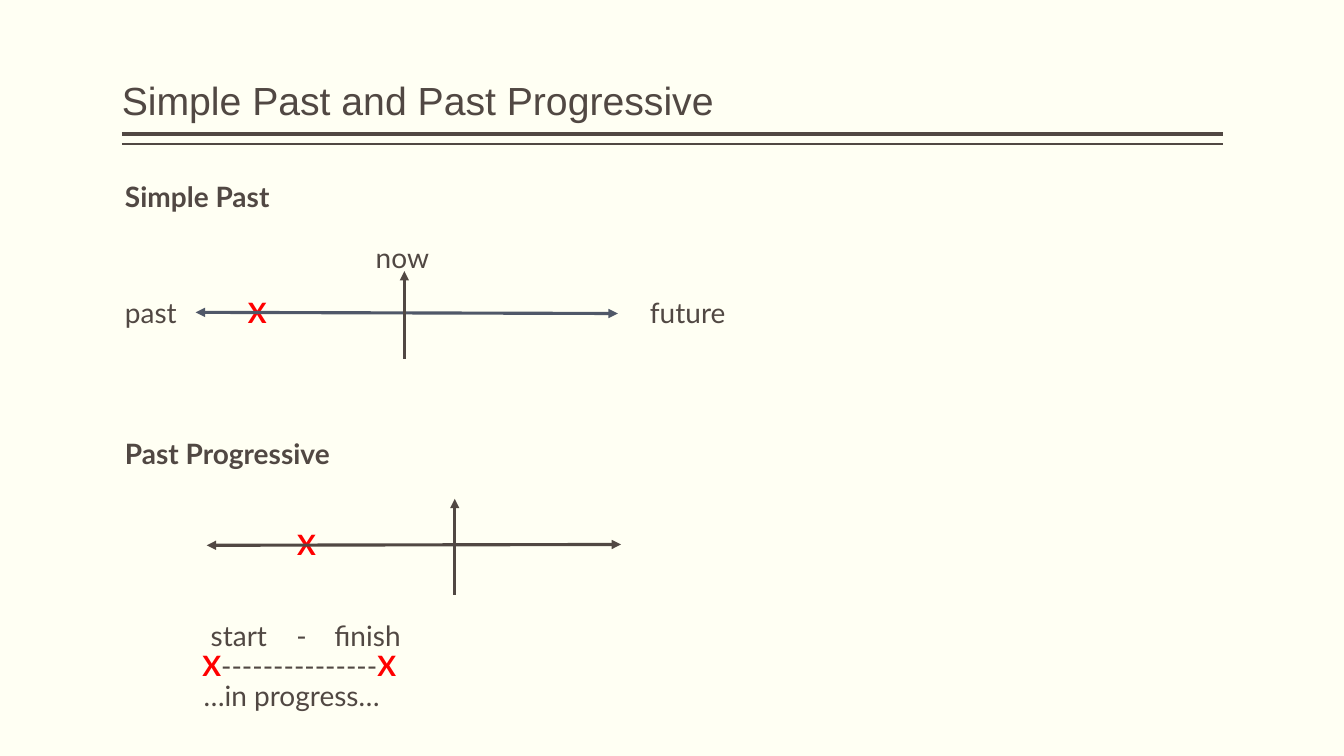
from lxml import etree
from pptx import Presentation
from pptx.dml.color import RGBColor
from pptx.enum.shapes import MSO_CONNECTOR
from pptx.enum.text import MSO_ANCHOR, MSO_AUTO_SIZE, PP_ALIGN
from pptx.oxml.ns import qn
from pptx.util import Cm, Pt

STRAIGHT = MSO_CONNECTOR.STRAIGHT
MIDDLE = MSO_ANCHOR.MIDDLE
BOTTOM = MSO_ANCHOR.BOTTOM
LEFT = PP_ALIGN.LEFT
NO_AUTOFIT = MSO_AUTO_SIZE.NONE
BROWN, SLATE, RED, CREAM = "514843", "505868", "FF0000", "FFFFF3"
LABEL_HEIGHT = 0.86


def paint(color_format, color):
    color_format.rgb = RGBColor.from_string(color)


def draw_line(start, end, color, weight, arrow_ends=()):
    connector = slide.shapes.add_connector(
        STRAIGHT, Cm(start[0]), Cm(start[1]), Cm(end[0]), Cm(end[1]))
    connector.line.width = Pt(weight)
    paint(connector.line.color, color)
    outline = connector.line._get_or_add_ln()
    for arrow_end in arrow_ends:
        etree.SubElement(outline, qn(f"a:{arrow_end}"), type="triangle")
    etree.SubElement(connector._element.spPr, qn("a:effectLst"))


presentation = Presentation()
presentation.slide_width = Cm(33.87)
presentation.slide_height = Cm(19.05)
slide = presentation.slides.add_slide(presentation.slide_layouts[5])
slide.background.fill.solid()
paint(slide.background.fill.fore_color, CREAM)

for height, weight in [(3.38, 3), (3.63, 1)]:
    draw_line((3.07, height), (30.81, height), BROWN, weight)

title = slide.shapes.title
title.left, title.top, title.width, title.height = Cm(3.07), Cm(1.57), Cm(27.74), Cm(1.68)
title_frame = title.text_frame
title_frame.text = "Simple Past and Past Progressive"
title_frame.auto_size = NO_AUTOFIT
title_frame.vertical_anchor = BOTTOM
title_frame.margin_left = title_frame.margin_right = 0
heading = title_frame.paragraphs[0]
heading.alignment = LEFT
heading.line_spacing = 0.9
heading.font.name = "Arial"
heading.font.size = Pt(28)
paint(heading.font.color, BROWN)

labels = [
    (3.15, 4.94, 6, ["Simple Past"], True),
    (9.47, 6.48, 2, ["now"], False),
    (3.15, 7.86, 1.7, ["past"], False),
    (6.25, 7.86, 0.8, ["X"], True),
    (16.38, 7.86, 3, ["future"], False),
    (3.15, 11.43, 8, ["Past Progressive"], True),
    (7.49, 13.72, 0.8, ["X"], True),
    (5.31, 16, 2, ["start"], False),
    (7.47, 16, 0.6, ["-"], False),
    (8.43, 16, 2.5, ["finish"], False),
    (5.1, 16.76, 6, ["X", "---------------", "X"], False),
    (5.13, 17.53, 6, ["…in progress…"], False),
]
for left, middle, width, pieces, bold in labels:
    label = slide.shapes.add_textbox(
        Cm(left), Cm(middle - LABEL_HEIGHT / 2), Cm(width), Cm(LABEL_HEIGHT))
    frame = label.text_frame
    frame.word_wrap = True
    frame.vertical_anchor = MIDDLE
    frame.margin_left = frame.margin_right = frame.margin_top = frame.margin_bottom = 0
    wording = frame.paragraphs[0]
    wording.font.name = "Lato"
    wording.font.size = Pt(20)
    wording.font.bold = bold
    paint(wording.font.color, BROWN)
    for piece in pieces:
        run = wording.add_run()
        run.text = piece
        if piece == "X":
            run.font.bold = True
            paint(run.font.color, RED)

both_ends = ("headEnd", "tailEnd")
far_end = ("tailEnd",)
timelines = [
    ((4.93, 7.87), (15.57, 7.9), SLATE, both_ends),
    ((10.19, 9.04), (10.19, 6.83), BROWN, far_end),
    ((5.21, 13.74), (15.65, 13.72), BROWN, both_ends),
    ((11.46, 14.99), (11.46, 12.57), BROWN, far_end),
]
for start, end, color, arrow_ends in timelines:
    draw_line(start, end, color, 2.25, arrow_ends)

presentation.save("out.pptx")
